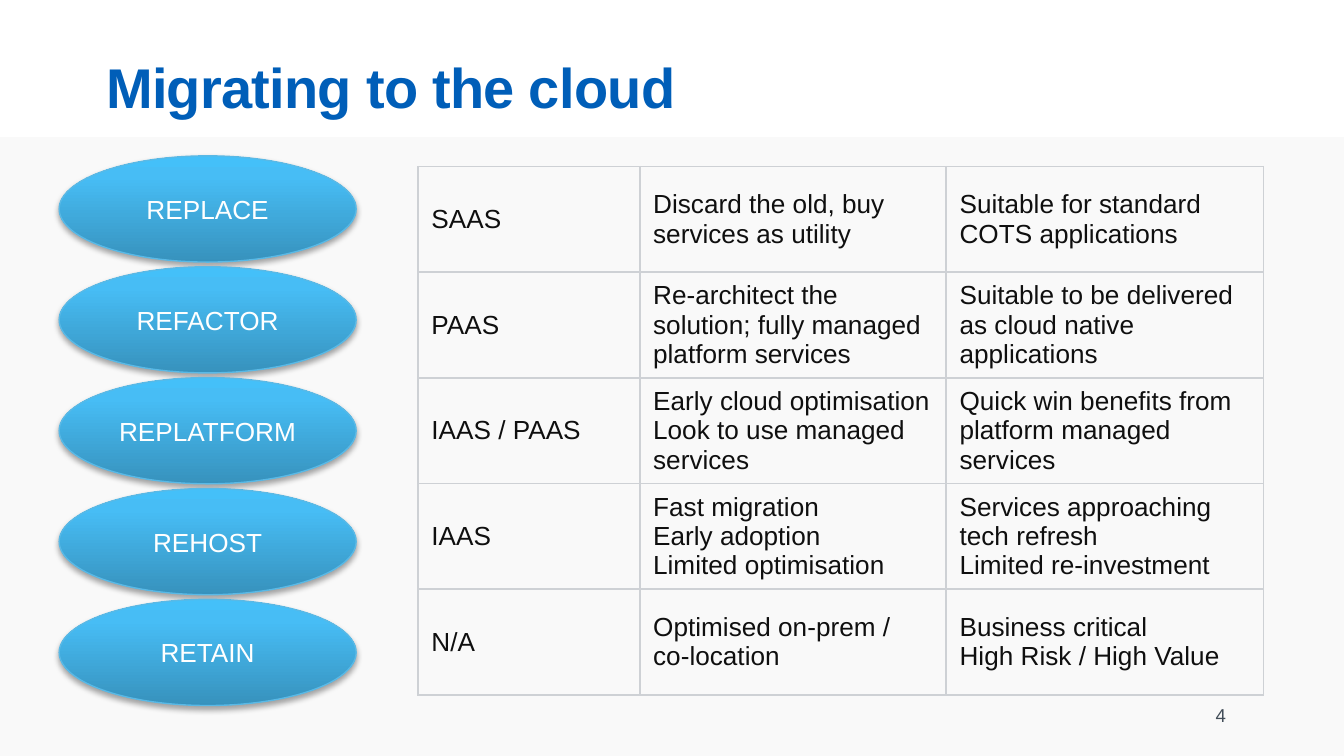
"""Build the cloud migration slide: five strategies beside a table of service models."""
from dataclasses import dataclass

from lxml.etree import SubElement
from pptx import Presentation
from pptx.dml.color import RGBColor as Color
from pptx.enum.shapes import MSO_SHAPE as Shape
from pptx.enum.text import MSO_ANCHOR as Anchor, PP_ALIGN as Align
from pptx.oxml import parse_xml
from pptx.oxml.ns import nsdecls, qn
from pptx.util import Inches, Pt

TITLE = "Migrating to the cloud"
PAGE_NUMBER = "4"
STRATEGIES = ["REPLACE", "REFACTOR", "REPLATFORM", "REHOST", "RETAIN"]
ROWS = [
    (["SAAS"],
     ["Discard the old, buy services as utility"],
     ["Suitable for standard COTS applications"]),
    (["PAAS"],
     ["Re-architect the solution; fully managed platform services"],
     ["Suitable to be delivered as cloud native applications"]),
    (["IAAS / PAAS"],
     ["Early cloud optimisation", "Look to use managed services"],
     ["Quick win benefits from platform managed services"]),
    (["IAAS"],
     ["Fast migration", "Early adoption", "Limited optimisation"],
     ["Services approaching tech refresh", "Limited re-investment"]),
    (["N/A"],
     ["Optimised on-prem /", "co-location"],
     ["Business critical", "High Risk / High Value"]),
]

SLIDE_WIDTH = Inches(10)
SLIDE_HEIGHT = SLIDE_WIDTH * 9 // 16
BAND_TOP = Inches(1.02)
COLUMN_WIDTHS = [1.65, 2.28, 2.36]
TABLE_LEFT, TABLE_TOP, TABLE_HEIGHT = 3.11, 1.24, 3.93
OVAL_LEFT, OVAL_TOP, OVAL_WIDTH, OVAL_HEIGHT = 0.44, 1.16, 2.21, 0.79
LAST_OVAL_TOP = 4.46


@dataclass(frozen=True)
class Theme:
    font: str = "Arial"
    title_size: float = 30
    body_size: float = 14
    number_size: float = 10
    title: str = "005EB8"
    band: str = "F9F9F9"
    body: str = "0F0F0F"
    number: str = "424D58"
    border: str = "CED1D5"
    oval_line: str = "59B9E6"
    oval_text: str = "FFFFFF"
    oval_stops: tuple = ((0, "3792BD"), (80, "47BDF5"), (100, "44C0F9"))


THEME = Theme()


def write(text_frame, lines, size, color, align=Align.LEFT, anchor=Anchor.MIDDLE, bold=False):
    text_frame.word_wrap = True
    text_frame.vertical_anchor = anchor
    for index, line in enumerate(lines):
        paragraph = text_frame.add_paragraph() if index else text_frame.paragraphs[0]
        paragraph.alignment = align
        run = paragraph.add_run()
        run.text = line
        run.font.name = THEME.font
        run.font.size = Pt(size)
        run.font.bold = bold
        run.font.color.rgb = Color.from_string(color)


def add_title(slide):
    title = slide.shapes.title
    title.left, title.top = Inches(0.79), Inches(0.39)
    title.width, title.height = Inches(8.35), Inches(0.58)
    frame = title.text_frame
    frame.margin_left = frame.margin_right = frame.margin_top = frame.margin_bottom = 0
    write(frame, [TITLE], THEME.title_size, THEME.title, anchor=Anchor.TOP, bold=True)
    frame.paragraphs[0].runs[0].font._element.set("spc", "-40")


def add_band(slide):
    band = slide.shapes.add_shape(
        Shape.RECTANGLE, 0, BAND_TOP, SLIDE_WIDTH, SLIDE_HEIGHT - BAND_TOP)
    band.shadow.inherit = False
    band.fill.solid()
    band.fill.fore_color.rgb = Color.from_string(THEME.band)
    band.line.fill.background()


def add_borders(cell):
    properties = cell._tc.get_or_add_tcPr()
    for side in ("a:lnL", "a:lnR", "a:lnT", "a:lnB"):
        line = SubElement(properties, qn(side), w=str(Pt(1)))
        fill = SubElement(line, qn("a:solidFill"))
        SubElement(fill, qn("a:srgbClr"), val=THEME.border)


def add_service_table(slide):
    frame = slide.shapes.add_table(
        len(ROWS), len(COLUMN_WIDTHS), Inches(TABLE_LEFT), Inches(TABLE_TOP),
        Inches(sum(COLUMN_WIDTHS)), Inches(TABLE_HEIGHT))
    table = frame.table
    table.first_row = table.horz_banding = False
    for column, width in zip(table.columns, COLUMN_WIDTHS):
        column.width = Inches(width)
    for row, contents in zip(table.rows, ROWS):
        for cell, lines in zip(row.cells, contents):
            add_borders(cell)
            cell.fill.background()
            cell.vertical_anchor = Anchor.MIDDLE
            write(cell.text_frame, lines, THEME.body_size, THEME.body)


def add_oval(slide, label, top):
    oval = slide.shapes.add_shape(
        Shape.OVAL, Inches(OVAL_LEFT), Inches(top), Inches(OVAL_WIDTH), Inches(OVAL_HEIGHT))
    oval.line.color.rgb = Color.from_string(THEME.oval_line)
    oval.line.width = Pt(0.75)
    stops = "".join(
        f'<a:gs pos="{position * 1000}"><a:srgbClr val="{color}"/></a:gs>'
        for position, color in THEME.oval_stops)
    gradient = parse_xml(
        f'<a:gradFill {nsdecls("a")} rotWithShape="1"><a:gsLst>{stops}</a:gsLst>'
        '<a:lin ang="16200000" scaled="0"/></a:gradFill>')
    shadow = parse_xml(
        f'<a:effectLst {nsdecls("a")}><a:outerShdw blurRad="{Pt(3.1)}" dist="{Pt(1.8)}" '
        'dir="5400000" rotWithShape="0"><a:srgbClr val="000000"><a:alpha val="35000"/>'
        '</a:srgbClr></a:outerShdw></a:effectLst>')
    properties = oval._element.spPr
    properties.find(qn("a:prstGeom")).addnext(gradient)
    properties.find(qn("a:ln")).addnext(shadow)
    write(oval.text_frame, [label], THEME.body_size, THEME.oval_text, Align.CENTER)


def add_page_number(slide):
    box = slide.shapes.add_textbox(Inches(6.89), Inches(5.17), Inches(2.33), Inches(0.3))
    write(box.text_frame, [PAGE_NUMBER], THEME.number_size, THEME.number, Align.RIGHT)


def main():
    presentation = Presentation()
    presentation.slide_width, presentation.slide_height = SLIDE_WIDTH, SLIDE_HEIGHT
    slide = presentation.slides.add_slide(presentation.slide_layouts[5])
    add_band(slide)
    add_title(slide)
    add_service_table(slide)
    add_page_number(slide)
    pitch = (LAST_OVAL_TOP - OVAL_TOP) / (len(STRATEGIES) - 1)
    for index, label in enumerate(STRATEGIES):
        add_oval(slide, label, OVAL_TOP + index * pitch)
    presentation.save("out.pptx")


if __name__ == "__main__":
    main()
